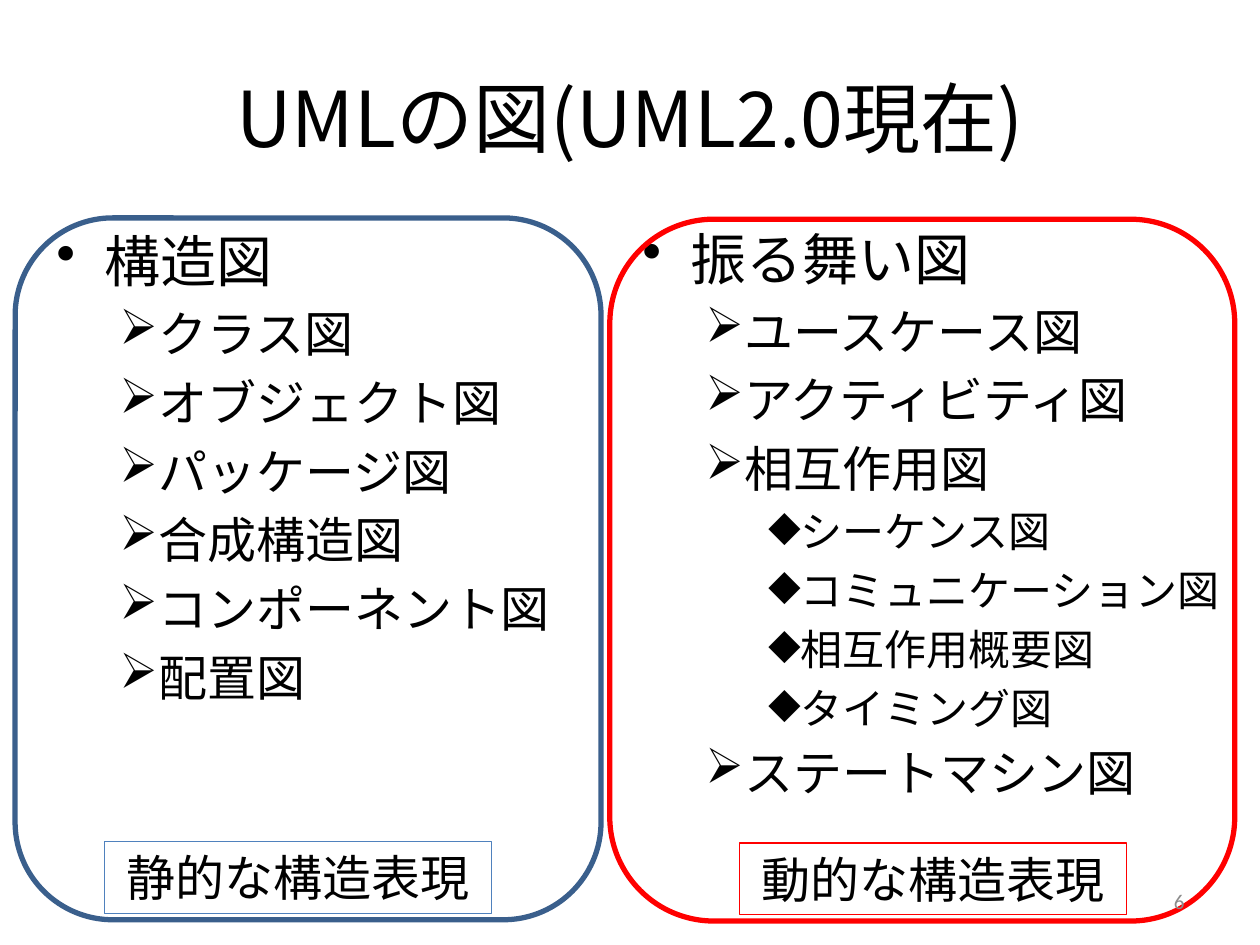
import pptx
import pptx.dml.color
import pptx.enum.shapes
import pptx.enum.text
import pptx.oxml.ns
import pptx.util
from lxml import etree
from pptx.util import Inches

RGBColor = pptx.dml.color.RGBColor
PP_ALIGN = pptx.enum.text.PP_ALIGN
ANCHOR = pptx.enum.text.MSO_ANCHOR
SHAPE = pptx.enum.shapes.MSO_SHAPE

BLACK = RGBColor(0x00, 0x00, 0x00)
GRAY = RGBColor(0x8C, 0x8C, 0x8C)
NAVY = RGBColor(0x3A, 0x5F, 0x8C)
BLUE = RGBColor(0x4F, 0x81, 0xBD)
RED = RGBColor(0xFF, 0x00, 0x00)
JAPANESE_FONT = "Noto Sans CJK JP"
LATIN_FONT = "Calibri"

# Per outline level: text size, left margin, hanging indent, bullet
LEVELS = [
    (32, 0.38, 0.38, "•"),
    (28, 0.81, 0.31, "➢"),
    (24, 1.25, 0.25, "◆"),
]

STRUCTURE = [
    (0, "構造図"),
    (1, "クラス図"),
    (1, "オブジェクト図"),
    (1, "パッケージ図"),
    (1, "合成構造図"),
    (1, "コンポーネント図"),
    (1, "配置図"),
]
BEHAVIOR = [
    (0, "振る舞い図"),
    (1, "ユースケース図"),
    (1, "アクティビティ図"),
    (1, "相互作用図"),
    (2, "シーケンス図"),
    (2, "コミュニケーション図"),
    (2, "相互作用概要図"),
    (2, "タイミング図"),
    (1, "ステートマシン図"),
]


def add_element(parent, tag, **attributes):
    return etree.SubElement(parent, pptx.oxml.ns.qn(tag), attributes)


def format_runs(paragraph, size, font_name=JAPANESE_FONT, color=BLACK):
    for run in paragraph.runs:
        run.font.size = pptx.util.Pt(size)
        run.font.name = font_name
        run.font.color.rgb = color
        add_element(run.font._element, "a:ea", typeface=JAPANESE_FONT)


def format_outline(paragraph, level):
    size, margin, hanging, bullet = LEVELS[level]
    paragraph.level = level
    properties = paragraph._p.get_or_add_pPr()
    properties.set("marL", str(Inches(margin)))
    properties.set("indent", str(-Inches(hanging)))
    spacing = add_element(properties, "a:spcBef")
    add_element(spacing, "a:spcPct", val="20000")
    add_element(properties, "a:buChar", char=bullet)
    format_runs(paragraph, size)


def add_line_of_text(slide, box, text, size, align, font_name, color):
    frame = slide.shapes.add_textbox(*map(Inches, box)).text_frame
    frame.word_wrap = True
    frame.vertical_anchor = ANCHOR.MIDDLE
    frame.text = text
    frame.paragraphs[0].alignment = align
    format_runs(frame.paragraphs[0], size, font_name, color)


def add_outline(slide, box, items):
    frame = slide.shapes.add_textbox(*map(Inches, box)).text_frame
    frame.word_wrap = True
    frame.text = "\n".join(text for _, text in items)
    for paragraph, (level, _) in zip(frame.paragraphs, items):
        format_outline(paragraph, level)


def add_outlined_shape(slide, kind, box, color, width):
    shape = slide.shapes.add_shape(kind, *map(Inches, box))
    shape.shadow.inherit = False
    shape.fill.background()
    shape.line.color.rgb = color
    shape.line.width = pptx.util.Pt(width)
    return shape


def add_caption(slide, box, text, color):
    frame = add_outlined_shape(slide, SHAPE.RECTANGLE, box, color, 0.75).text_frame
    frame.word_wrap = True
    frame.vertical_anchor = ANCHOR.TOP
    frame.text = text
    frame.paragraphs[0].alignment = PP_ALIGN.CENTER
    format_runs(frame.paragraphs[0], 28, LATIN_FONT)


def add_category(slide, box, outline_box, items, caption, frame_color, caption_color):
    """Place a rounded frame with its diagram outline and a caption at the bottom."""
    left, top, _, height = box
    add_outline(slide, outline_box, items)
    add_outlined_shape(slide, SHAPE.ROUNDED_RECTANGLE, box, frame_color, 3)
    caption_left, caption_width = caption[1:]
    add_caption(slide, (left + caption_left, top + height - 0.62, caption_width, 0.57),
                caption[0], caption_color)


def main():
    presentation = pptx.Presentation()
    presentation.slide_width = Inches(10)
    presentation.slide_height = Inches(7.5)
    slide = presentation.slides.add_slide(presentation.slide_layouts[6])

    add_line_of_text(slide, (0.5, 0.3, 9, 1.25), "UMLの図(UML2.0現在)", 44,
                     PP_ALIGN.CENTER, JAPANESE_FONT, BLACK)
    add_category(slide, (0.12, 1.73, 4.65, 5.57), (0.35, 1.75, 4.34, 4.95),
                 STRUCTURE, ("静的な構造表現", 0.71, 3.07), NAVY, BLUE)
    add_category(slide, (4.84, 1.74, 4.96, 5.57), (5, 1.73, 5.03, 4.95),
                 BEHAVIOR, ("動的な構造表現", 1.03, 3.07), RED, RED)
    add_line_of_text(slide, (7.17, 6.95, 2.33, 0.4), "6", 12,
                     PP_ALIGN.RIGHT, LATIN_FONT, GRAY)

    presentation.save("out.pptx")


if __name__ == "__main__":
    main()
